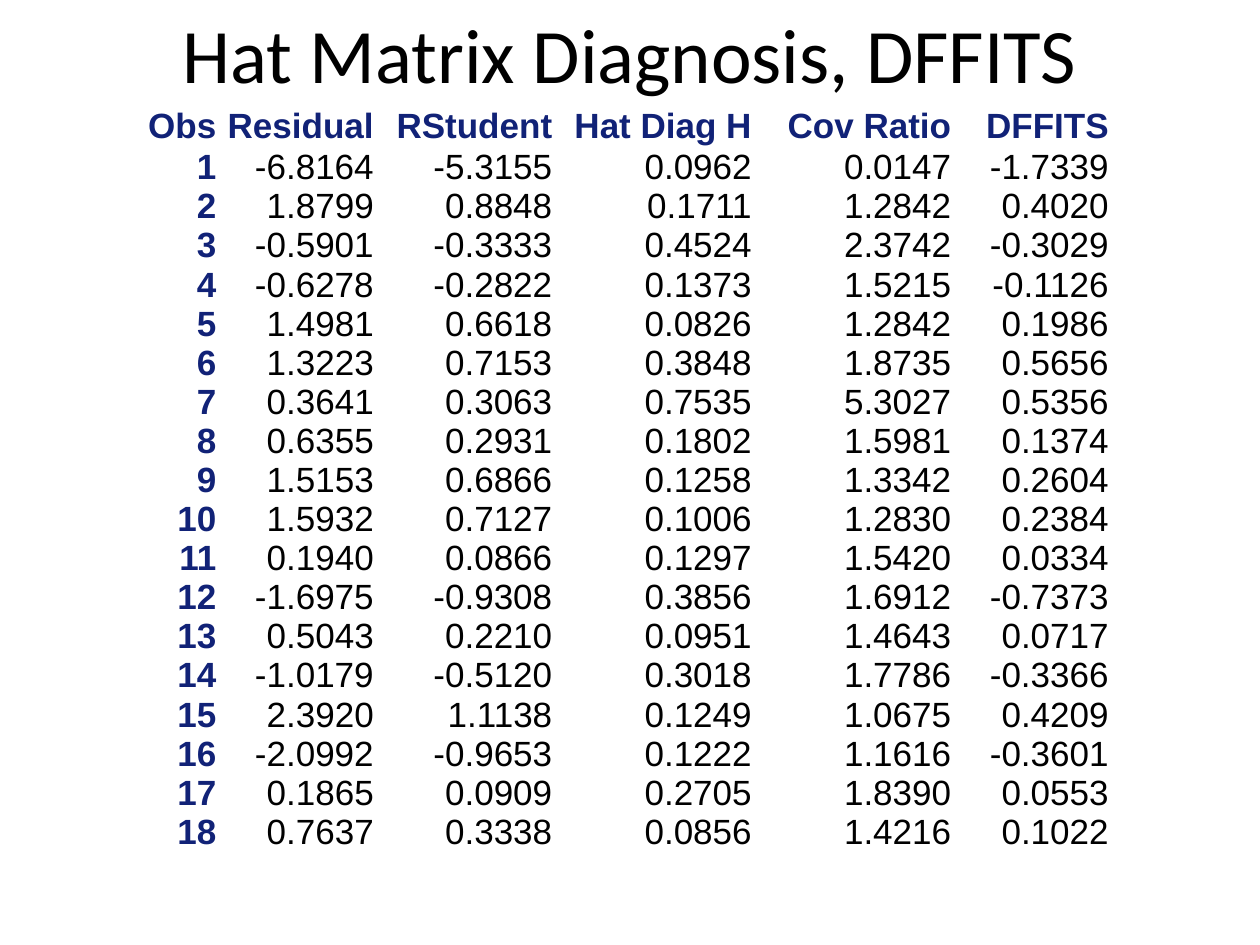
from typing import NamedTuple

from pptx import Presentation
from pptx.dml.color import RGBColor
from pptx.enum.text import MSO_ANCHOR, PP_ALIGN
from pptx.util import Emu, Pt

EMU_PER_PX = 7620  # 120 px to the inch
BLACK = "000000"
NAVY = "112277"


class TextStyle(NamedTuple):
    font: str
    size: int
    color: str
    bold: bool = False


class Column(NamedTuple):
    heading: str
    width: int


TITLE_STYLE = TextStyle("Calibri", 44, BLACK)
LABEL_STYLE = TextStyle("Arial", 20, NAVY, bold=True)
VALUE_STYLE = TextStyle("Arial", 20, BLACK)

COLUMNS = [
    Column("Obs", 80),
    Column("Residual", 150),
    Column("RStudent", 170),
    Column("Hat Diag H", 190),
    Column("Cov Ratio", 190),
    Column("DFFITS", 150),
]
DIAGNOSTICS = [
    (-6.8164, -5.3155, 0.0962, 0.0147, -1.7339),
    (1.8799, 0.8848, 0.1711, 1.2842, 0.4020),
    (-0.5901, -0.3333, 0.4524, 2.3742, -0.3029),
    (-0.6278, -0.2822, 0.1373, 1.5215, -0.1126),
    (1.4981, 0.6618, 0.0826, 1.2842, 0.1986),
    (1.3223, 0.7153, 0.3848, 1.8735, 0.5656),
    (0.3641, 0.3063, 0.7535, 5.3027, 0.5356),
    (0.6355, 0.2931, 0.1802, 1.5981, 0.1374),
    (1.5153, 0.6866, 0.1258, 1.3342, 0.2604),
    (1.5932, 0.7127, 0.1006, 1.2830, 0.2384),
    (0.1940, 0.0866, 0.1297, 1.5420, 0.0334),
    (-1.6975, -0.9308, 0.3856, 1.6912, -0.7373),
    (0.5043, 0.2210, 0.0951, 1.4643, 0.0717),
    (-1.0179, -0.5120, 0.3018, 1.7786, -0.3366),
    (2.3920, 1.1138, 0.1249, 1.0675, 0.4209),
    (-2.0992, -0.9653, 0.1222, 1.1616, -0.3601),
    (0.1865, 0.0909, 0.2705, 1.8390, 0.0553),
    (0.7637, 0.3338, 0.0856, 1.4216, 0.1022),
]


def px(length: int) -> Emu:
    return Emu(length * EMU_PER_PX)


def rgb(color: str) -> RGBColor:
    return RGBColor.from_string(color)


def write(paragraph, text: str, style: TextStyle, align: PP_ALIGN) -> None:
    paragraph.alignment = align
    run = paragraph.add_run()
    run.text = text
    run.font.name = style.font
    run.font.size = Pt(style.size)
    run.font.bold = style.bold
    run.font.color.rgb = rgb(style.color)


def place_title(slide, text: str) -> None:
    title = slide.shapes.title
    title.left, title.top, title.width, title.height = px(0), px(0), px(1200), px(100)
    title.text_frame.vertical_anchor = MSO_ANCHOR.MIDDLE
    write(title.text_frame.paragraphs[0], text, TITLE_STYLE, PP_ALIGN.CENTER)


def fill_cell(cell, text: str, style: TextStyle) -> None:
    cell.fill.background()
    cell.vertical_anchor = MSO_ANCHOR.MIDDLE
    cell.margin_left = cell.margin_right = px(4)
    cell.margin_top = cell.margin_bottom = px(0)
    write(cell.text_frame.paragraphs[0], text, style, PP_ALIGN.RIGHT)


def add_diagnostics_table(slide) -> None:
    rows = [[column.heading for column in COLUMNS]]
    for number, values in enumerate(DIAGNOSTICS, start=1):
        rows.append([str(number)] + [f"{value:.4f}" for value in values])

    width = sum(column.width for column in COLUMNS)
    frame = slide.shapes.add_table(
        len(rows), len(COLUMNS), px(130), px(100), px(width), px(761)
    )
    table = frame.table
    table.first_row = table.horz_banding = False
    for table_column, column in zip(table.columns, COLUMNS):
        table_column.width = px(column.width)
    for r, texts in enumerate(rows):
        table.rows[r].height = px(41 if r == 0 else 28)
        for c, text in enumerate(texts):
            is_label = r == 0 or c == 0
            fill_cell(table.cell(r, c), text, LABEL_STYLE if is_label else VALUE_STYLE)
    frame.height = px(761)


def main() -> None:
    presentation = Presentation()
    presentation.slide_width, presentation.slide_height = px(1200), px(900)
    slide = presentation.slides.add_slide(presentation.slide_layouts[5])
    place_title(slide, "Hat Matrix Diagnosis, DFFITS")
    add_diagnostics_table(slide)
    presentation.save("out.pptx")


if __name__ == "__main__":
    main()
